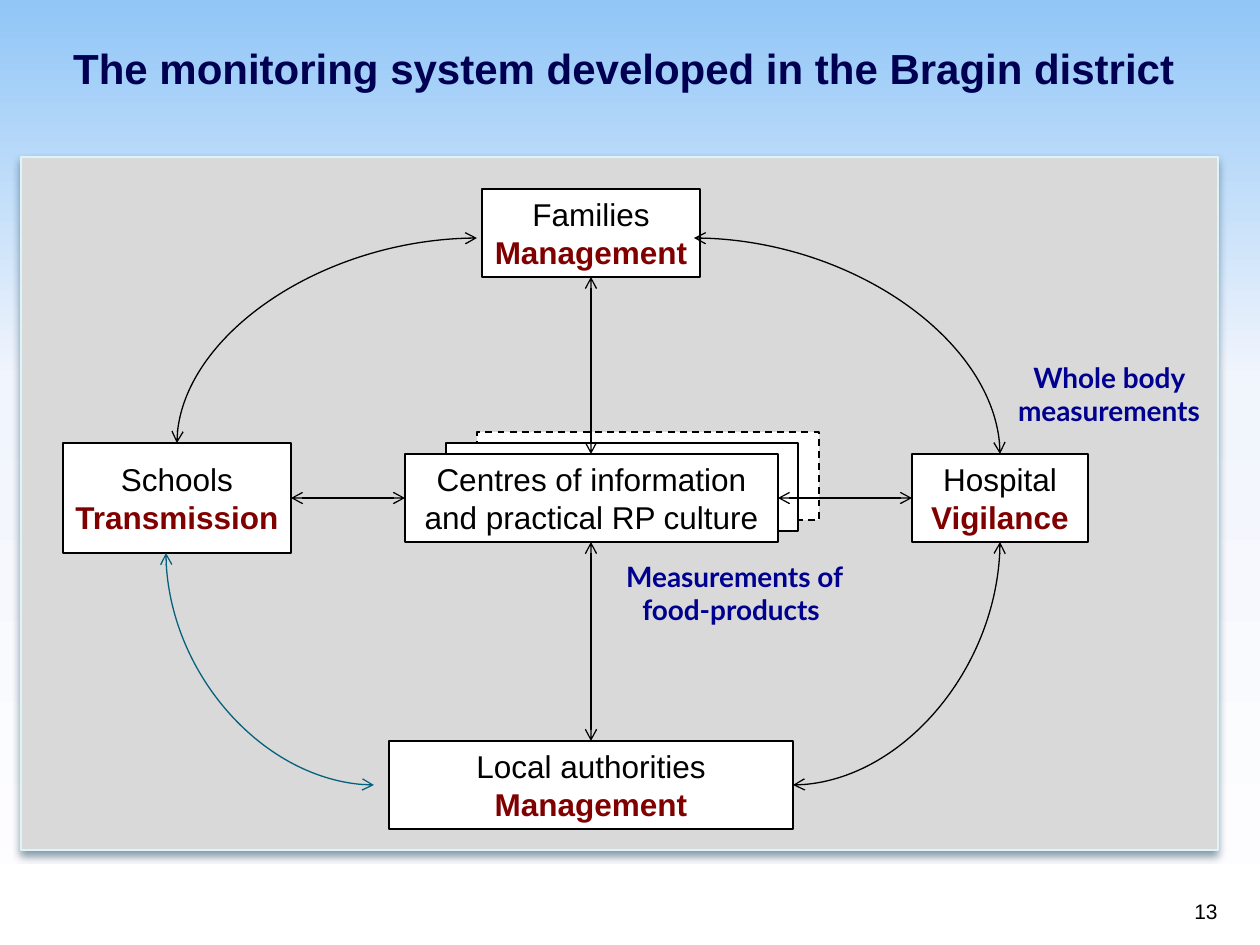
"""Build the slide on the monitoring system of the Bragin district."""
from copy import deepcopy

from lxml import etree
from pptx import Presentation
from pptx.dml.color import RGBColor
from pptx.enum.dml import MSO_LINE
from pptx.enum.shapes import MSO_CONNECTOR as Link, MSO_SHAPE
from pptx.enum.text import MSO_ANCHOR as Anchor, PP_ALIGN as Align
from pptx.oxml import parse_xml
from pptx.oxml.ns import nsdecls, qn
from pptx.util import Pt

PX = 914400 / 126


def px(*lengths):
    return [round(length * PX) for length in lengths]


def color(value):
    return RGBColor.from_string(value)


deck = Presentation()
deck.slide_width, deck.slide_height = px(1260, 945)
page = deck.slides.add_slide(deck.slide_layouts[5])

backdrop = page.background.fill
backdrop.gradient()
backdrop.gradient_angle = 270
stop_list = page.element.find(".//" + qn("a:gsLst"))
stop_list.append(deepcopy(stop_list[-1]))
stops = [(0, "91C6F7"), (0.4, "F1F5FC"), (1, "FFFFFF")]
for stop, (position, shade) in zip(backdrop.gradient_stops, stops):
    stop.position = position
    stop.color.rgb = color(shade)

title = page.shapes.title
title.left, title.top, title.width, title.height = px(0, 21, 1260, 126)
frame = title.text_frame
frame.word_wrap = True
frame.vertical_anchor = Anchor.MIDDLE
frame.margin_left, frame.margin_top, frame.margin_right, frame.margin_bottom = px(0, 6, 12, 38)
para = frame.paragraphs[0]
para.text = "The monitoring system developed in the Bragin district"
para.alignment = Align.CENTER
para.font.name, para.font.size, para.font.bold = "Arial", Pt(24), True
para.font.color.rgb = color("000053")

boxes = [
    ((21, 157, 1197, 693), "D9D9D9", "DBF5F9", 0.75, []),
    ((477, 432, 342, 88), "FFFFFF", "000000", 1, []),
    ((446, 443, 352, 88), "FFFFFF", "000000", 1, []),
    ((482, 189, 218, 88), "FFFFFF", "000000", 1, ["Families ", "Management"]),
    ((389, 741, 404, 88), "FFFFFF", "000000", 0.75, ["Local authorities ", "Management"]),
    ((912, 454, 176, 88), "FFFFFF", "000000", 0.75, ["Hospital ", "Vigilance"]),
    ((405, 454, 373, 88), "FFFFFF", "000000", 1, ["Centres of information and practical RP culture"]),
    ((63, 443, 228, 110), "FFFFFF", "000000", 1, ["Schools ", "Transmission"]),
]
shapes = []
for place, fill, line, weight, words in boxes:
    box = page.shapes.add_shape(MSO_SHAPE.RECTANGLE, *px(*place))
    box.shadow.inherit = False
    box.fill.solid()
    box.fill.fore_color.rgb = color(fill)
    box.line.color.rgb = color(line)
    box.line.width = Pt(weight)
    box.text_frame.vertical_anchor = Anchor.MIDDLE
    para = box.text_frame.paragraphs[0]
    para.alignment = Align.CENTER
    para.font.name, para.font.size = "Arial", Pt(18)
    for word, shade, bold in zip(words, ["000000", "800000"], [False, True]):
        span = para.add_run()
        span.text = word
        span.font.bold = bold
        span.font.color.rgb = color(shade)
    shapes.append(box)

panel, dashed_card = shapes[:2]
dashed_card.line.dash_style = MSO_LINE.DASH
effects = panel.element.spPr.find(qn("a:effectLst"))
effects.append(parse_xml(
    f'<a:outerShdw {nsdecls("a")} blurRad="57150" dist="38100" dir="5400000" rotWithShape="0">'
    '<a:srgbClr val="042747"><a:alpha val="48000"/></a:srgbClr></a:outerShdw>'))

links = [
    (Link.STRAIGHT, (591, 277, 591, 454), "000000"),
    (Link.STRAIGHT, (591, 542, 591, 741), "000000"),
    (Link.STRAIGHT, (291, 498, 405, 498), "000000"),
    (Link.STRAIGHT, (778, 498, 912, 498), "000000"),
    (Link.CURVE, (374, 785, 166, 553), "04617B"),
    (Link.CURVE, (477, 238, 177, 443), "000000"),
    (Link.CURVE, (694, 238, 1000, 454), "000000"),
    (Link.CURVE, (793, 785, 1000, 542), "000000"),
]
for kind, ends, shade in links:
    link = page.shapes.add_connector(kind, *px(*ends))
    link.line.color.rgb = color(shade)
    link.line.width = Pt(0.75)
    props = link.element.spPr
    if kind == Link.CURVE:
        props.find(qn("a:prstGeom")).set("prst", "curvedConnector2")
    for tip in ("a:headEnd", "a:tailEnd"):
        etree.SubElement(props.find(qn("a:ln")), qn(tip), type="arrow")
    etree.SubElement(props, qn("a:effectLst"))

labels = [
    ((602, 553, 265, 84), "Measurements of food-products ", Align.CENTER, Anchor.TOP, "Lato", 16, "000090", True),
    ((1000, 354, 218, 84), "Whole body measurements", Align.CENTER, Anchor.TOP, "Lato", 16, "000090", True),
    ((968, 867, 262, 63), "13", Align.RIGHT, Anchor.BOTTOM, "Arial", 12, "000000", False),
]
for place, words, align, anchor, face, size, shade, bold in labels:
    label = page.shapes.add_textbox(*px(*place))
    label.text_frame.word_wrap = True
    label.text_frame.vertical_anchor = anchor
    para = label.text_frame.paragraphs[0]
    para.text = words
    para.alignment = align
    para.font.name, para.font.size, para.font.bold = face, Pt(size), bold
    para.font.color.rgb = color(shade)

deck.save("out.pptx")
